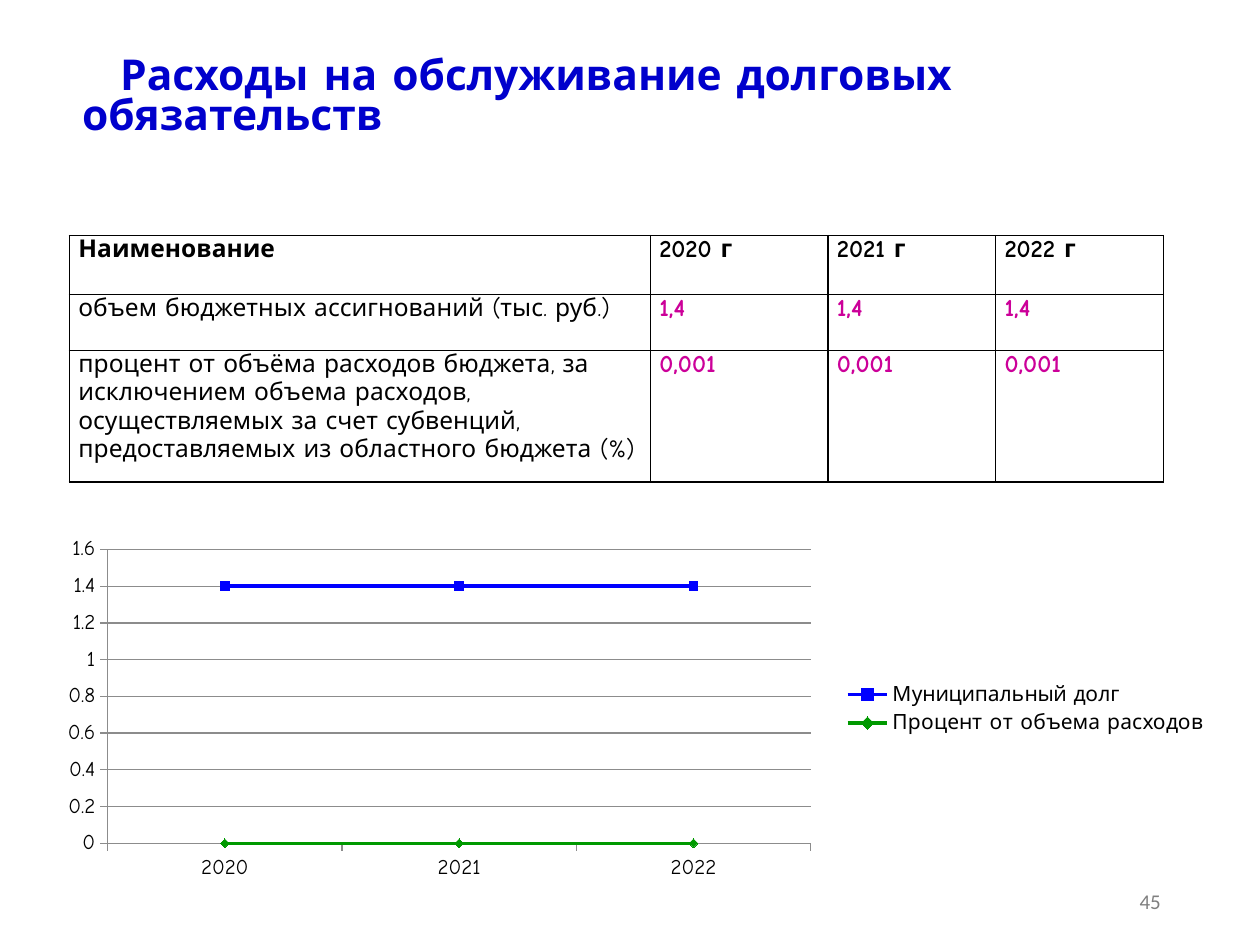
from lxml import etree
from pptx import Presentation
from pptx.chart.data import CategoryChartData
from pptx.dml.color import RGBColor
from pptx.enum import chart as charts, text
from pptx.oxml import ns, parse_xml
from pptx.util import Cm, Pt

COLOURS = {
    "title": "0000CC", "text": "000000", "value": "CC0099", "number": "808080",
    "axis": "8C8C8C", "debt": "0000FF", "share": "009900", "paper": "FFFFFF",
}
FONT = "Comic Neue"
HEADER = ["Наименование", "2020 г", "2021 г", "2022 г"]
ROWS = [
    ["объем бюджетных ассигнований (тыс. руб.)"] + ["1,4"] * 3,
    ["процент от объёма расходов бюджета, за исключением объема расходов, "
     "осуществляемых за счет субвенций, предоставляемых из областного "
     "бюджета (%)"] + ["0,001"] * 3,
]


def colour(name):
    return RGBColor.from_string(COLOURS[name])


def style(font, size, shade, bold=False, face=FONT):
    font.name, font.size, font.bold = face, Pt(size), bold
    font.color.rgb = colour(shade)


def add_span(para, words, *look, **options):
    span = para.add_run()
    span.text = words
    style(span.font, *look, **options)


def place(shape, box):
    shape.left, shape.top, shape.width, shape.height = map(Cm, box)


def add_title(page, box):
    title = page.shapes.title
    place(title, box)
    frame = title.text_frame
    frame.word_wrap = True
    frame.auto_size = text.MSO_AUTO_SIZE.NONE
    frame.vertical_anchor = text.MSO_ANCHOR.MIDDLE
    frame.margin_top, frame.margin_bottom = 0, Cm(0.76)
    para = frame.paragraphs[0]
    para.alignment = text.PP_ALIGN.LEFT
    para.line_spacing = 0.8
    para._p.get_or_add_pPr().set("indent", str(Cm(0.77)))
    add_span(para, "Расходы на обслуживание долговых обязательств",
             24.3, "title", bold=True)


def add_number(page, box):
    frame = page.shapes.add_textbox(*map(Cm, box)).text_frame
    frame.word_wrap = True
    frame.vertical_anchor = text.MSO_ANCHOR.MIDDLE
    para = frame.paragraphs[0]
    para.alignment = text.PP_ALIGN.RIGHT
    add_span(para, "45", 12, "number", face="Calibri")


def add_borders(cell):
    # Borders come before the fill in the cell properties
    props = cell._tc.get_or_add_tcPr()
    for index, side in enumerate(("lnL", "lnR", "lnT", "lnB")):
        line = etree.Element(ns.qn("a:" + side), w=str(Pt(1)))
        fill = etree.SubElement(line, ns.qn("a:solidFill"))
        etree.SubElement(fill, ns.qn("a:srgbClr"), val=COLOURS["text"])
        props.insert(index, line)


def add_costs_table(page, box):
    content = [HEADER] + ROWS
    table = page.shapes.add_table(len(content), len(HEADER), *map(Cm, box)).table
    for column, width in zip(table.columns, (11.71, 3.58, 3.38, 3.38)):
        column.width = Cm(width)
    for row, height in zip(table.rows, (1.19, 1.13, 2.65)):
        row.height = Cm(height)
    for i, values in enumerate(content):
        for j, words in enumerate(values):
            cell = table.cell(i, j)
            cell.margin_left = cell.margin_right = Cm(0.18)
            cell.margin_top = cell.margin_bottom = 0
            cell.fill.solid()
            cell.fill.fore_color.rgb = colour("paper")
            add_borders(cell)
            add_span(cell.text_frame.paragraphs[0], words, 14,
                     "value" if i and j else "text", bold=i == 0 or j > 0)


def fix_plot_area(chart, fractions):
    area = chart._chartSpace.chart.plotArea
    for old in area.findall(ns.qn("c:layout")):
        area.remove(old)
    parts = "".join(f'<c:{key} val="{value}"/>' for key, value in fractions.items())
    area.insert(0, parse_xml(
        f'<c:layout {ns.nsdecls("c")}><c:manualLayout><c:layoutTarget val="inner"/>'
        f'<c:xMode val="edge"/><c:yMode val="edge"/>{parts}'
        '</c:manualLayout></c:layout>'))


def add_debt_chart(page, box):
    data = CategoryChartData()
    data.categories = ["2020", "2021", "2022"]
    data.add_series("Муниципальный долг", [1.4] * 3)
    data.add_series("Процент от объема расходов", [0] * 3)
    chart = page.shapes.add_chart(
        charts.XL_CHART_TYPE.LINE_MARKERS, *map(Cm, box), data).chart
    chart.has_title = False
    style(chart.font, 12, "text")
    fix_plot_area(chart, {"x": 0.05, "y": 0.05, "w": 0.6, "h": 0.83})

    # Axes and grid
    for axis in (chart.category_axis, chart.value_axis):
        axis.major_tick_mark = charts.XL_TICK_MARK.OUTSIDE
        axis.minor_tick_mark = charts.XL_TICK_MARK.NONE
        axis.format.line.color.rgb = colour("axis")
        style(axis.tick_labels.font, 12, "text")
    scale = chart.value_axis
    scale.minimum_scale, scale.maximum_scale, scale.major_unit = 0, 1.6, 0.2
    scale.major_gridlines.format.line.color.rgb = colour("axis")

    # Legend
    chart.has_legend = True
    chart.legend.position = charts.XL_LEGEND_POSITION.RIGHT
    chart.legend.include_in_layout = False
    style(chart.legend.font, 12, "text")

    # Series
    plot = chart.plots[0]
    plot.vary_by_categories = False
    markers = charts.XL_MARKER_STYLE
    looks = [("debt", markers.SQUARE), ("share", markers.DIAMOND)]
    for series, (shade, marker) in zip(plot.series, looks):
        series.smooth = False
        series.format.line.width = Pt(2)
        series.format.line.color.rgb = colour(shade)
        series.marker.style, series.marker.size = marker, 5
        series.marker.format.fill.solid()
        series.marker.format.fill.fore_color.rgb = colour(shade)
        series.marker.format.line.color.rgb = colour(shade)


def main():
    deck = Presentation()
    deck.slide_width, deck.slide_height = Cm(25.4), Cm(19.05)
    page = deck.slides.add_slide(deck.slide_layouts[5])
    add_title(page, (1.4, 1.19, 22.63, 2.34))
    add_number(page, (17.93, 17.65, 5.72, 1.02))
    add_costs_table(page, (1.4, 4.75, 22.05, 4.97))
    add_debt_chart(page, (0.99, 10.72, 23.62, 7.14))
    deck.save("out.pptx")


if __name__ == "__main__":
    main()
